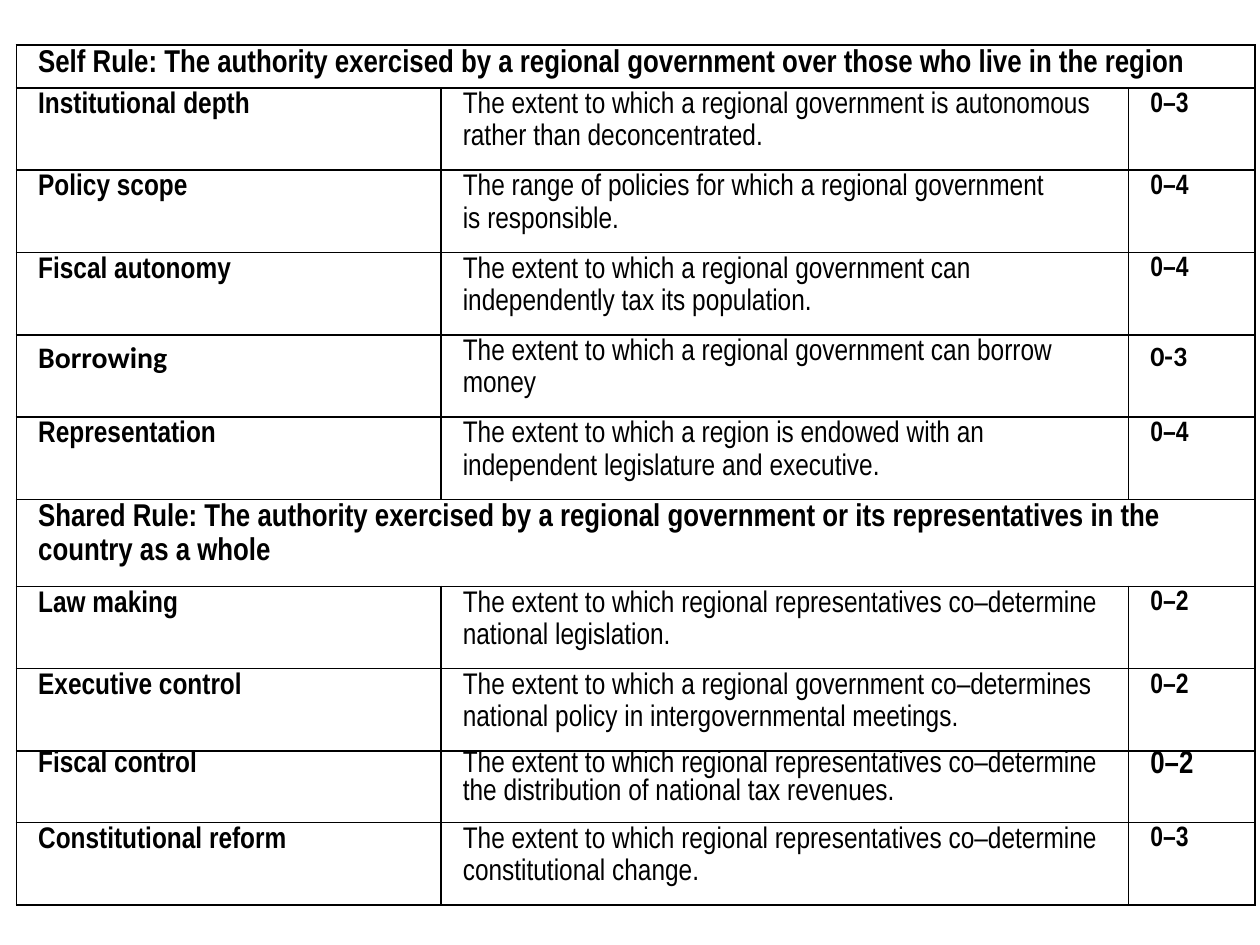
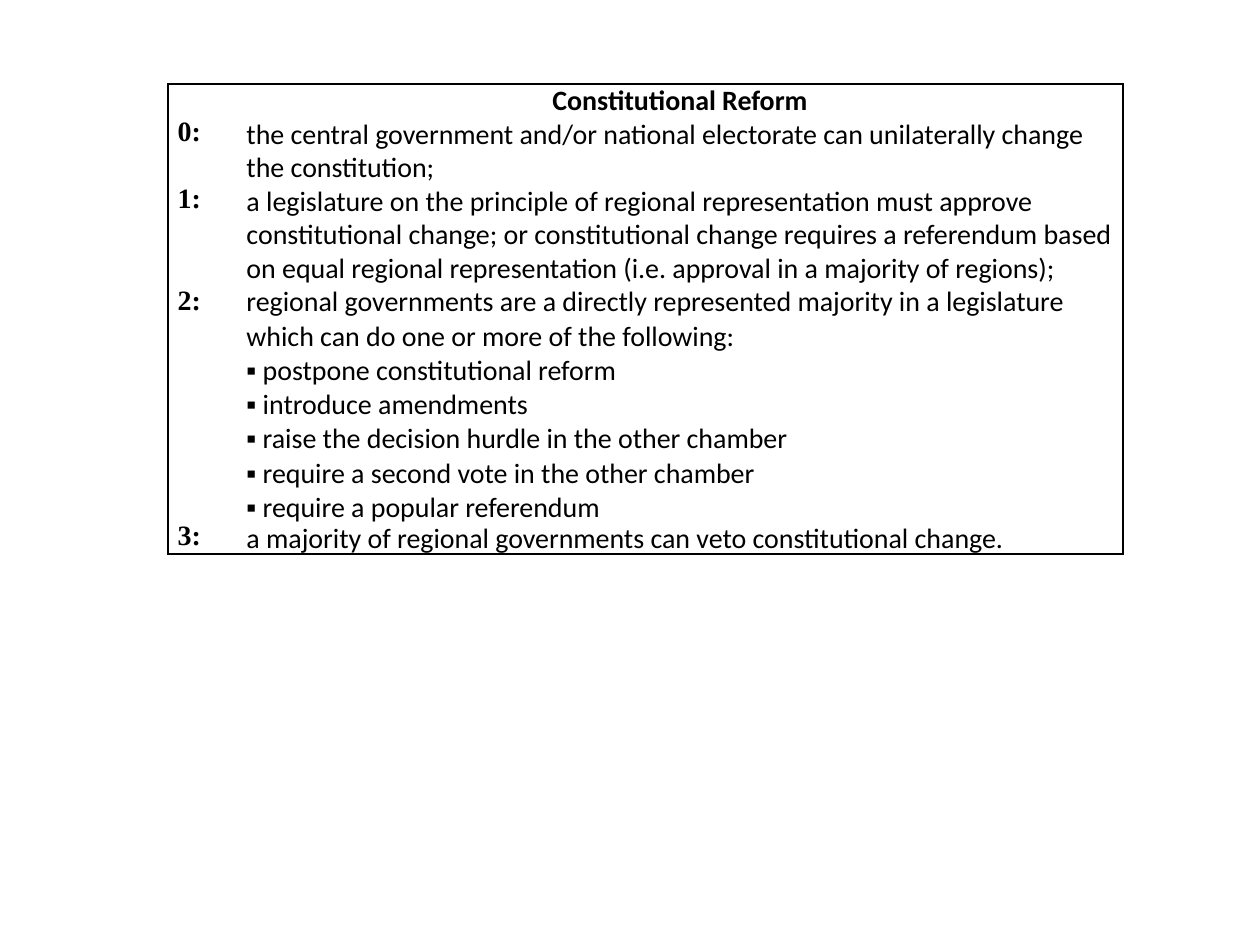
"""Build two slides of tables on regional authority and constitutional reform."""
from dataclasses import dataclass, field

from lxml import etree
from pptx import Presentation
from pptx.dml.color import RGBColor
from pptx.enum.text import MSO_ANCHOR, PP_ALIGN
from pptx.oxml.ns import qn
from pptx.util import Cm, Pt

TOP, MIDDLE = MSO_ANCHOR.TOP, MSO_ANCHOR.MIDDLE
CENTER = PP_ALIGN.CENTER
BLACK = "000000"
NARROW, SANS, SERIF = "Arial Narrow", "Calibri", "Times New Roman"
SIDES = "LRTB"
MARGINS = {"margin_left": Cm(0.19), "margin_right": Cm(0.19),
           "margin_top": 0, "margin_bottom": 0}
SPACED = {"space_before": Pt(6), "space_after": Pt(6)}
LOOSE = {**SPACED, "line_spacing": 1.15}
SNUG = {"line_spacing": 0.98}
TIGHT = {"line_spacing": 0.85, "space_after": Pt(6)}


@dataclass
class Entry:
    """Text of one table cell with its format."""
    text: str = ""
    size: float = 16
    font: str = SANS
    bold: bool = False
    para: dict = field(default_factory=dict)
    indent: float = 0
    anchor: int = TOP
    borders: str = SIDES


@dataclass
class Grid:
    """Place and measures of a table in centimetres."""
    left: float
    top: float
    cols: list[float]
    rows: list[float]


@dataclass
class Dimension:
    """One scored dimension of regional authority."""
    name: str
    meaning: str
    score: str
    font: str = NARROW
    score_size: float = 16
    height: float = 1.66
    para: dict = field(default_factory=lambda: LOOSE)


@dataclass
class Rule:
    """A group of dimensions under one heading."""
    heading: str
    height: float
    dimensions: list[Dimension]


@dataclass
class Level:
    """One score of constitutional reform."""
    score: str
    paragraphs: str
    para: dict = field(default_factory=lambda: SNUG)


RULES = [
    Rule("Self Rule: The authority exercised by a regional government over those who live in the region", 0.86, [
        Dimension("Institutional depth", "The extent to which a regional government is autonomous rather than deconcentrated.", "0–3"),
        Dimension("Policy scope", "The range of policies for which a regional government \vis responsible.", "0–4"),
        Dimension("Fiscal autonomy", "The extent to which a regional government can independently tax its population.", "0–4"),
        Dimension("Borrowing", "The extent to which a regional government can borrow money", "0-3", font=SANS),
        Dimension("Representation", "The extent to which a region is endowed with an independent legislature and executive.", "0–4"),
    ]),
    Rule("Shared Rule: The authority exercised by a regional government or its representatives in the country as a whole", 1.75, [
        Dimension("Law making", "The extent to which regional representatives co–determine national legislation.", "0–2"),
        Dimension("Executive control", "The extent to which a regional government co–determines national policy in intergovernmental meetings.", "0–2"),
        Dimension("Fiscal control", "The extent to which regional representatives co–determine the distribution of national tax revenues.", "0–2",
                  score_size=18, height=1.44, para=SPACED),
        Dimension("Constitutional reform", "The extent to which regional representatives co–determine constitutional change.", "0–3"),
    ]),
]

OPTIONS = ["postpone constitutional reform", "introduce amendments",
           "raise the decision hurdle in the other chamber",
           "require a second vote in the other chamber",
           "require a popular referendum"]

LEVELS = [
    Level("0:", "the central government and/or national electorate can unilaterally change the constitution;"),
    Level("1:", "a legislature on the principle of regional representation must approve constitutional change; "
                "or constitutional change requires a referendum based on equal regional representation "
                "(i.e. approval in a majority of regions);"),
    Level("2:", "regional governments are a directly represented majority in a legislature "
                "which can do one or more of the following:\n" + "\v".join(f"▪ {o}" for o in OPTIONS), {}),
    Level("3:", "a majority of regional governments can veto constitutional change.", TIGHT),
]


def color(value: str) -> RGBColor:
    """Turn a hex string into a colour."""
    return RGBColor.from_string(value)


def apply(target, formats: dict) -> None:
    """Set every format value on the target."""
    for name, value in formats.items():
        setattr(target, name, value)


def set_borders(cell, sides: str) -> None:
    """Draw the named sides of a cell and clear the others."""
    tcPr = cell._tc.get_or_add_tcPr()
    for i, side in enumerate(SIDES):
        ln = etree.Element(qn(f"a:ln{side}"), w=str(Pt(1)))
        if side in sides:
            fill = etree.SubElement(ln, qn("a:solidFill"))
            etree.SubElement(fill, qn("a:srgbClr"), val=BLACK)
        else:
            etree.SubElement(ln, qn("a:noFill"))
        tcPr.insert(i, ln)


def fill_cell(cell, entry: Entry) -> None:
    """Write an entry into a cell with its format."""
    apply(cell, {**MARGINS, "vertical_anchor": entry.anchor})
    cell.fill.background()
    set_borders(cell, entry.borders)
    tf = cell.text_frame
    tf.text = entry.text
    for p in tf.paragraphs:
        apply(p, entry.para)
        if entry.indent:
            p._p.get_or_add_pPr().set("marL", str(Cm(entry.indent)))
        for r in p.runs:
            apply(r.font, {"size": Pt(entry.size), "name": entry.font, "bold": entry.bold})
            r.font.color.rgb = color(BLACK)
        if not entry.text:
            etree.SubElement(p._p, qn("a:endParaRPr"), sz=str(int(entry.size * 100)))


def draw_table(s, grid: Grid, entries: list[list[Entry]]):
    """Add a table, fill its cells and join rows that hold one entry."""
    gf = s.shapes.add_table(len(grid.rows), len(grid.cols), Cm(grid.left), Cm(grid.top),
                            Cm(sum(grid.cols)), Cm(sum(grid.rows)))
    table = gf.table
    apply(table, {"first_row": False, "horz_banding": False})
    for col, width in zip(table.columns, grid.cols):
        col.width = Cm(width)
    last = len(grid.cols) - 1
    for i, (height, row) in enumerate(zip(grid.rows, entries)):
        table.rows[i].height = Cm(height)
        if len(row) == 1:
            table.cell(i, 0).merge(table.cell(i, last))
            row = row + [Entry()] * last
        for j, entry in enumerate(row):
            fill_cell(table.cell(i, j), entry)
    return gf


def authority_slide(prs) -> None:
    """Draw the table of self rule and shared rule."""
    s = prs.slides.add_slide(prs.slide_layouts[6])
    rows, entries = [], []
    for rule in RULES:
        rows.append(rule.height)
        entries.append([Entry(rule.heading, 18, NARROW, True, LOOSE, 0.25)])
        for d in rule.dimensions:
            rows.append(d.height)
            entries.append([Entry(d.name, 17, d.font, True, d.para, 0.25),
                            Entry(d.meaning, 17, NARROW, False, d.para, 0.25),
                            Entry(d.score, d.score_size, d.font, True, d.para, 0.25)])
    draw_table(s, Grid(0.33, 0.91, [8.56, 13.86, 2.55], rows), entries)


def reform_slide(prs) -> None:
    """Draw the table of constitutional reform scores."""
    s = prs.slides.add_slide(prs.slide_layouts[6])
    entries = [[Entry(size=12, borders="LT"),
                Entry("Constitutional Reform", bold=True, anchor=MIDDLE, borders="RT",
                      para={**SPACED, **SNUG, "alignment": CENTER})]]
    for level in LEVELS:
        bottom = "B" if level is LEVELS[-1] else ""
        entries.append([Entry(level.score, font=SERIF, bold=True, para=level.para, borders="L" + bottom),
                        Entry(level.paragraphs, para=level.para, borders="R" + bottom)])
    gf = draw_table(s, Grid(3.39, 1.69, [1.39, 17.86], [0] * len(entries)), entries)
    gf.height = Cm(10.16)


def main() -> None:
    """Build and save the presentation."""
    prs = Presentation()
    apply(prs, {"slide_width": Cm(25.4), "slide_height": Cm(19.05)})
    authority_slide(prs)
    reform_slide(prs)
    prs.save("out.pptx")


if __name__ == "__main__":
    main()
